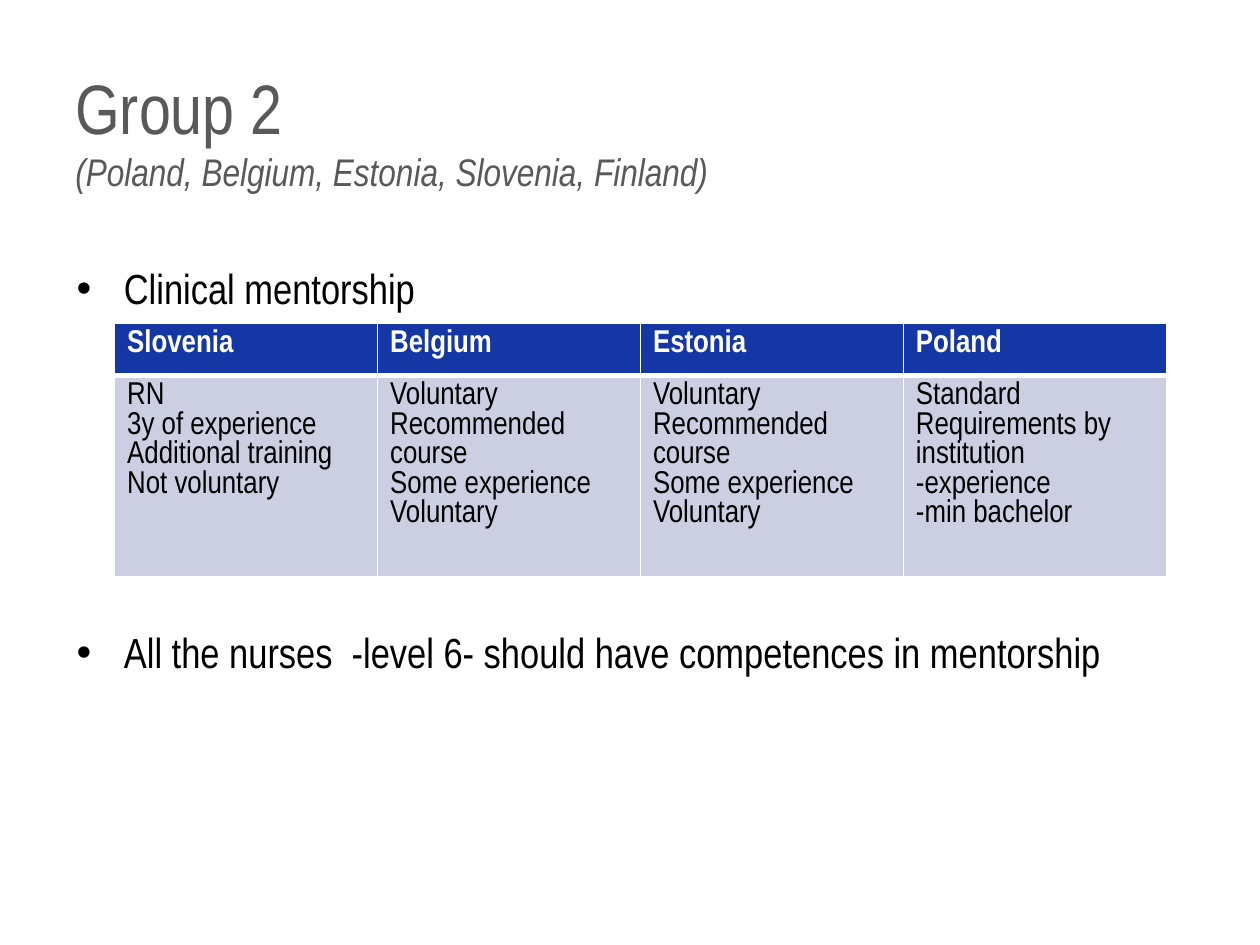
from dataclasses import dataclass

from lxml import etree
from pptx import Presentation
from pptx.dml.color import RGBColor
from pptx.enum.text import MSO_ANCHOR
from pptx.oxml.ns import qn
from pptx.util import Pt

MIDDLE = MSO_ANCHOR.MIDDLE
TOP = MSO_ANCHOR.TOP
FONT = "Arial Narrow"
WHITE, BLACK, GREY = "FFFFFF", "000000", "595959"
HEADER_FILL, BODY_FILL = "1437A5", "CCCEE1"
BULLET_INDENT = 27


@dataclass
class Country:
    name: str
    notes: list[str]


@dataclass
class Bullet:
    text: str
    space_before: float


VOLUNTARY_NOTES = ["Voluntary", "Recommended course", "Some experience", "Voluntary"]
COUNTRIES = [
    Country("Slovenia", ["RN", "3y of experience", "Additional training", "Not voluntary"]),
    Country("Belgium", VOLUNTARY_NOTES),
    Country("Estonia", VOLUNTARY_NOTES),
    Country("Poland", ["Standard Requirements by institution", "-experience", "-min bachelor"]),
]
# The second bullet stands below the table
BULLETS = [
    Bullet("Clinical mentorship", 0),
    Bullet("All the nurses  -level 6- should have competences in mentorship", 179),
]


def color(value: str) -> RGBColor:
    return RGBColor.from_string(value)


def format_font(font, size: float, value: str, bold=False, italic=False) -> None:
    font.name = FONT
    font.size = Pt(size)
    font.bold = bold
    font.italic = italic
    font.color.rgb = color(value)


def add_text_box(slide, left: float, top: float, width: float, height: float, anchor):
    shape = slide.shapes.add_textbox(Pt(left), Pt(top), Pt(width), Pt(height))
    text_frame = shape.text_frame
    text_frame.word_wrap = True
    text_frame.vertical_anchor = anchor
    return text_frame


def add_title(slide) -> None:
    text_frame = add_text_box(slide, 36, 28.8, 647, 90, MIDDLE)
    paragraph = text_frame.paragraphs[0]
    paragraph.text = "Group 2\v(Poland, Belgium, Estonia, Slovenia, Finland)"
    heading, members = paragraph.runs
    format_font(heading.font, 40, GREY)
    format_font(members.font, 22, GREY, italic=True)


def add_bullets(slide, bullets: list[Bullet]) -> None:
    text_frame = add_text_box(slide, 36.7, 146.6, 646.5, 365, TOP)
    text_frame.text = "\n".join(bullet.text for bullet in bullets)
    for paragraph, bullet in zip(text_frame.paragraphs, bullets):
        paragraph.space_before = Pt(bullet.space_before)
        properties = paragraph._p.get_or_add_pPr()
        properties.set("marL", str(Pt(BULLET_INDENT)))
        properties.set("indent", str(-Pt(BULLET_INDENT)))
        bullet_font = etree.SubElement(properties, qn("a:buFont"))
        bullet_font.set("typeface", "Arial")
        etree.SubElement(properties, qn("a:buChar")).set("char", "•")
        format_font(paragraph.runs[0].font, 24, BLACK)


def set_borders(cell, widths: dict[str, float]) -> None:
    properties = cell._tc.get_or_add_tcPr()
    for index, (side, width) in enumerate(widths.items()):
        line = etree.Element(qn(f"a:{side}"), w=str(Pt(width)))
        fill = etree.SubElement(line, qn("a:solidFill"))
        etree.SubElement(fill, qn("a:srgbClr"), val=WHITE)
        properties.insert(index, line)


def fill_cell(cell, lines: list[str], fill: str, text_color: str,
              bold: bool, top: float, bottom: float) -> None:
    cell.fill.solid()
    cell.fill.fore_color.rgb = color(fill)
    set_borders(cell, {"lnL": 1, "lnR": 1, "lnT": top, "lnB": bottom})
    cell.text_frame.text = "\n".join(lines)
    for paragraph in cell.text_frame.paragraphs:
        format_font(paragraph.runs[0].font, 18, text_color, bold)


def add_country_table(slide, countries: list[Country]) -> None:
    column_width, row_heights = 150.25, (29.5, 92)
    table = slide.shapes.add_table(
        len(row_heights), len(countries), Pt(65.5), Pt(185),
        Pt(column_width * len(countries)), Pt(sum(row_heights))).table
    for row, height in zip(table.rows, row_heights):
        row.height = Pt(height)
    for index, country in enumerate(countries):
        table.columns[index].width = Pt(column_width)
        fill_cell(table.cell(0, index), [country.name], HEADER_FILL, WHITE, True, 1, 3)
        fill_cell(table.cell(1, index), country.notes, BODY_FILL, BLACK, False, 3, 1)


def main() -> None:
    presentation = Presentation()
    presentation.slide_width = Pt(720)
    presentation.slide_height = Pt(540)
    slide = presentation.slides.add_slide(presentation.slide_layouts[6])
    slide.background.fill.solid()
    slide.background.fill.fore_color.rgb = color(WHITE)

    # Heading, bullet list and comparison table
    add_title(slide)
    add_bullets(slide, BULLETS)
    add_country_table(slide, COUNTRIES)
    presentation.save("out.pptx")


if __name__ == "__main__":
    main()
